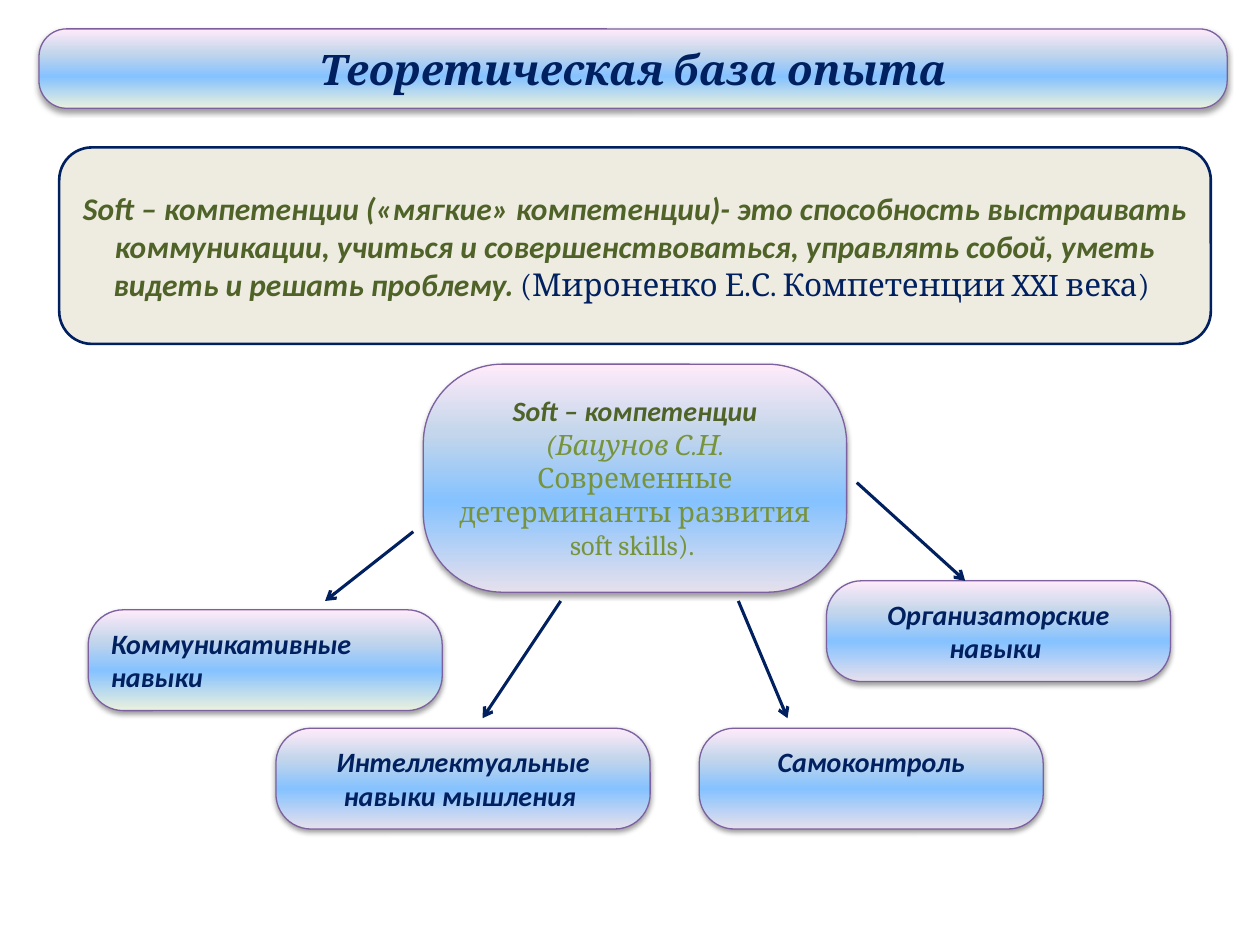
from dataclasses import dataclass

from lxml import etree
from pptx import Presentation
from pptx.dml.color import RGBColor
from pptx.enum.shapes import MSO_CONNECTOR, MSO_SHAPE
from pptx.enum.text import MSO_ANCHOR, MSO_AUTO_SIZE, PP_ALIGN
from pptx.oxml.ns import qn
from pptx.util import Inches, Pt

ROUNDED = MSO_SHAPE.ROUNDED_RECTANGLE
STRAIGHT = MSO_CONNECTOR.STRAIGHT
TOP, MIDDLE = MSO_ANCHOR.TOP, MSO_ANCHOR.MIDDLE
GROW = MSO_AUTO_SIZE.SHAPE_TO_FIT_TEXT
LEFT, CENTER = PP_ALIGN.LEFT, PP_ALIGN.CENTER

WIDTH, HEIGHT = Inches(10), Inches(7.5)
COLUMNS, ROWS = 100, 75


@dataclass(frozen=True)
class Theme:
    """Colours, fonts and type sizes of the slide."""
    navy: str = "002060"
    olive: str = "4F6228"
    light_olive: str = "77933C"
    cream: str = "EEECE1"
    purple: str = "7D60A0"
    green_tint: str = "EBF1DE"
    purple_tint: str = "E6E0EC"
    sheen: tuple = ((40, "85C2FF"), (70, "C4D6EB"), (100, "FFEBFA"))
    sans: str = "Calibri"
    serif: str = "Cambria"
    title_size: int = 24
    definition_size: int = 18
    skill_size: int = 16


THEME = Theme()


@dataclass(frozen=True)
class Box:
    """A rectangle in columns and rows of the slide grid."""
    left: float
    top: float
    width: float
    height: float

    def inner(self, left, top, width, height):
        """Return a box offset from this one."""
        return Box(self.left + left, self.top + top, width, height)

    def point(self, column, row):
        """Return a slide position offset from this box."""
        return (round((self.left + column) * WIDTH / COLUMNS),
                round((self.top + row) * HEIGHT / ROWS))

    def frame(self):
        """Return left, top, width and height in slide units."""
        return (*self.point(0, 0), round(self.width * WIDTH / COLUMNS),
                round(self.height * HEIGHT / ROWS))


def write_runs(shape, runs, size, alignment):
    """Write one paragraph of (text, font, colour, bold, italic) runs."""
    paragraph = shape.text_frame.paragraphs[0]
    paragraph.alignment = alignment
    for text, font_name, color, bold, italic in runs:
        run = paragraph.add_run()
        run.text = text
        run.font.name, run.font.size = font_name, Pt(size)
        run.font.bold, run.font.italic = bold, italic
        run.font.color.rgb = RGBColor.from_string(color)


def add_panel(slide, box, line_color, line_width, anchor):
    """Add an outlined rounded rectangle without a shadow."""
    shape = slide.shapes.add_shape(ROUNDED, *box.frame())
    shape.shadow.inherit = False
    shape.line.color.rgb = RGBColor.from_string(line_color)
    shape.line.width = Pt(line_width)
    shape.text_frame.word_wrap = True
    shape.text_frame.vertical_anchor = anchor
    return shape


def add_glossy_panel(slide, box, base_color):
    """Add a rounded panel with a vertical gradient and a soft shadow."""
    shape = add_panel(slide, box, THEME.purple, 0.75, TOP)
    shape.adjustments[0] = 0.348
    shape.text_frame.auto_size = GROW
    shape.fill.gradient()
    shape.fill.gradient_angle = 90
    properties = shape._element.spPr
    stops = properties.find(qn("a:gradFill")).find(qn("a:gsLst"))
    for stop in list(stops):
        stops.remove(stop)
    for position, color in ((0, base_color), *THEME.sheen):
        stop = etree.SubElement(stops, qn("a:gs"), pos=str(position * 1000))
        etree.SubElement(stop, qn("a:srgbClr"), val=color)
    shadow = etree.SubElement(properties.find(qn("a:effectLst")), qn("a:outerShdw"),
                              blurRad="40000", dist="20000", dir="5400000", rotWithShape="0")
    shadow_color = etree.SubElement(shadow, qn("a:srgbClr"), val="000000")
    etree.SubElement(shadow_color, qn("a:alpha"), val="38000")
    return shape


def add_arrow(slide, start, end):
    """Add a straight navy arrow between two slide positions."""
    connector = slide.shapes.add_connector(STRAIGHT, *start, *end)
    connector.line.color.rgb = RGBColor.from_string(THEME.navy)
    connector.line.width = Pt(1.75)
    etree.SubElement(connector.line._get_or_add_ln(), qn("a:tailEnd"), type="arrow")
    etree.SubElement(connector._element.spPr, qn("a:effectLst"))


def add_title(slide, box):
    """Place the heading panel."""
    shape = add_glossy_panel(slide, box, THEME.green_tint)
    runs = [("Теоретическая база опыта", THEME.serif, THEME.navy, True, True)]
    write_runs(shape, runs, THEME.title_size, CENTER)


def add_definition(slide, box):
    """Place the definition of soft competences."""
    shape = add_panel(slide, box, THEME.navy, 1.5, MIDDLE)
    shape.fill.solid()
    shape.fill.fore_color.rgb = RGBColor.from_string(THEME.cream)
    runs = [
        ("Soft – компетенции («мягкие» компетенции)- это способность выстраивать "
         "коммуникации, учиться и совершенствоваться, управлять собой, уметь видеть "
         "и решать проблему", THEME.sans, THEME.olive, True, True),
        (". ", THEME.serif, THEME.olive, True, True),
        ("(Мироненко Е.С. Компетенции XXI века) ", THEME.serif, THEME.navy, False, False),
    ]
    write_runs(shape, runs, THEME.definition_size, CENTER)


def add_skill_diagram(slide, box):
    """Place the central concept, its four skills and the arrows to them."""
    skills = [
        ("Коммуникативные навыки", (0, 19.5, 28.1, 8), THEME.green_tint, LEFT,
         (25.8, 13.3), (18.8, 18.8)),
        ("Самоконтроль", (48.5, 28.9, 27.3, 8), THEME.purple_tint, CENTER,
         (51.6, 18.8), (55.5, 28.1)),
        ("Организаторские навыки ", (58.6, 17.2, 27.3, 8), THEME.purple_tint, CENTER,
         (61, 9.4), (69.6, 17.2)),
        ("Интеллектуальные навыки мышления ", (14.9, 28.9, 29.7, 8), THEME.purple_tint,
         CENTER, (37.5, 18.8), (31.3, 28.1)),
    ]
    for text, place, base_color, alignment, start, end in skills:
        shape = add_glossy_panel(slide, box.inner(*place), base_color)
        runs = [(text, THEME.sans, THEME.navy, True, True)]
        write_runs(shape, runs, THEME.skill_size, alignment)
        add_arrow(slide, box.point(*start), box.point(*end))
    concept = add_glossy_panel(slide, box.inner(26.6, 0, 33.6, 18.1), THEME.purple_tint)
    runs = [
        ("Soft – компетенции ", THEME.sans, THEME.olive, True, True),
        ("(Бацунов С.Н. ", THEME.serif, THEME.light_olive, False, True),
        ("Современные детерминанты развития soft skills). ",
         THEME.serif, THEME.light_olive, False, False),
    ]
    write_runs(concept, runs, THEME.skill_size, CENTER)


def main():
    """Build the slide and save it."""
    presentation = Presentation()
    presentation.slide_width, presentation.slide_height = WIDTH, HEIGHT
    slide = presentation.slides.add_slide(presentation.slide_layouts[6])
    add_title(slide, Box(3.1, 2.3, 94.3, 6.3))
    add_definition(slide, Box(4.7, 11.7, 91.4, 15.6))
    add_skill_diagram(slide, Box(7, 28.9, 85.9, 36.9))
    presentation.save("out.pptx")


if __name__ == "__main__":
    main()
